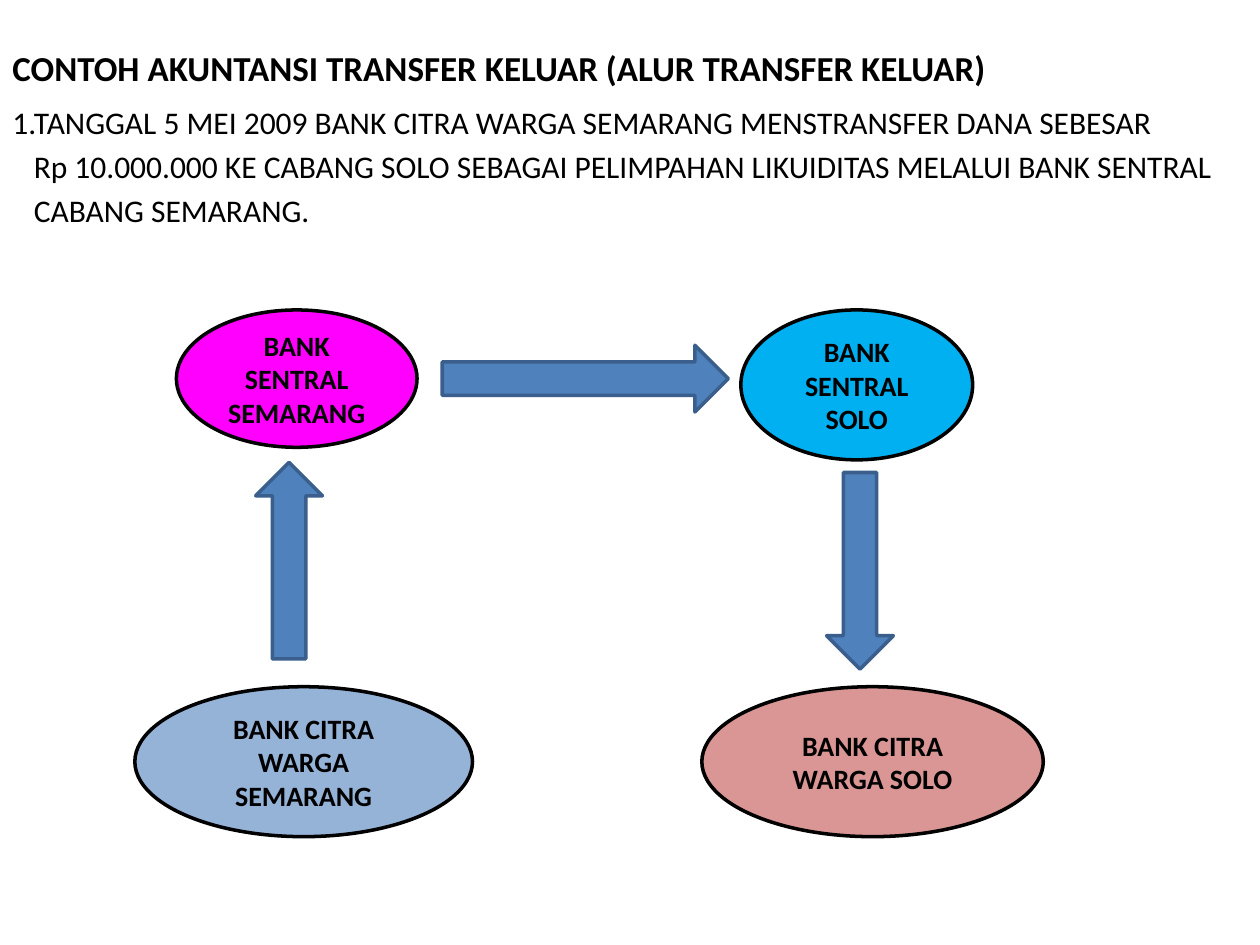
from pptx import Presentation
from pptx.dml.color import RGBColor
from pptx.enum.shapes import MSO_SHAPE as Shape
from pptx.enum.text import MSO_ANCHOR as Anchor, PP_ALIGN as Align
from pptx.util import Inches, Pt


def paint(shape, fill, line):
    shape.shadow.inherit = False
    shape.fill.solid()
    shape.fill.fore_color.rgb = RGBColor.from_string(fill)
    shape.line.color.rgb = RGBColor.from_string(line)
    shape.line.width = Pt(2)


def write(shape, *lines, size, bold=False, align=Align.LEFT, anchor=Anchor.TOP,
          space_before=0, hanging=0):
    """Fill the shape with one paragraph per line; only the first line hangs."""
    frame = shape.text_frame
    frame.word_wrap = True
    frame.vertical_anchor = anchor
    frame.text = "\n".join(lines)
    for number, paragraph in enumerate(frame.paragraphs):
        paragraph.alignment = align
        paragraph.space_before = Pt(space_before)
        if hanging:
            properties = paragraph._p.get_or_add_pPr()
            properties.set("marL", str(Inches(hanging)))
            properties.set("indent", str(Inches(0 if number else -hanging)))
        font = paragraph.runs[0].font
        font.name, font.size, font.bold = "Calibri", Pt(size), bold
        font.color.rgb = RGBColor.from_string("000000")


deck = Presentation()
deck.slide_width, deck.slide_height = Inches(10), Inches(7.5)
shapes = deck.slides.add_slide(deck.slide_layouts[6]).shapes

title = shapes.add_textbox(Inches(0), Inches(0.3), Inches(10), Inches(0.47))
write(title, "CONTOH AKUNTANSI TRANSFER KELUAR (ALUR TRANSFER KELUAR)",
      size=20, bold=True, anchor=Anchor.MIDDLE)

transaction = shapes.add_textbox(Inches(0), Inches(0.77), Inches(10), Inches(6.73))
write(transaction,
      "1.TANGGAL 5 MEI 2009 BANK CITRA WARGA SEMARANG MENSTRANSFER DANA SEBESAR",
      "Rp 10.000.000 KE CABANG SOLO SEBAGAI PELIMPAHAN LIKUIDITAS MELALUI BANK SENTRAL",
      "CABANG SEMARANG.",
      size=18, space_before=3.6, hanging=0.17)

banks = [
    ("BANK SENTRAL SEMARANG", "FF00FF", 1.4, 2.46, 1.91, 1.09),
    ("BANK CITRA WARGA SOLO", "D99694", 5.57, 5.45, 2.71, 1.19),
    ("BANK CITRA WARGA SEMARANG", "95B3D7", 1.07, 5.45, 2.68, 1.19),
    ("BANK SENTRAL SOLO", "00B0F0", 5.88, 2.46, 1.84, 1.19),
]
for name, color, *place in banks:
    bank = shapes.add_shape(Shape.OVAL, *map(Inches, place))
    paint(bank, color, "000000")
    write(bank, name, size=16, bold=True, align=Align.CENTER, anchor=Anchor.MIDDLE)

# The transfer goes up, across and down: left, top, length, rotation
transfers = [(2.03, 3.67, 1.56, 0), (4.38, 1.87, 2.27, 90), (6.56, 3.75, 1.56, 180)]
for left, top, length, rotation in transfers:
    transfer = shapes.add_shape(Shape.UP_ARROW, Inches(left), Inches(top),
                                Inches(0.53), Inches(length))
    transfer.rotation = rotation
    paint(transfer, "4F81BD", "3A5F8C")

deck.save("out.pptx")
